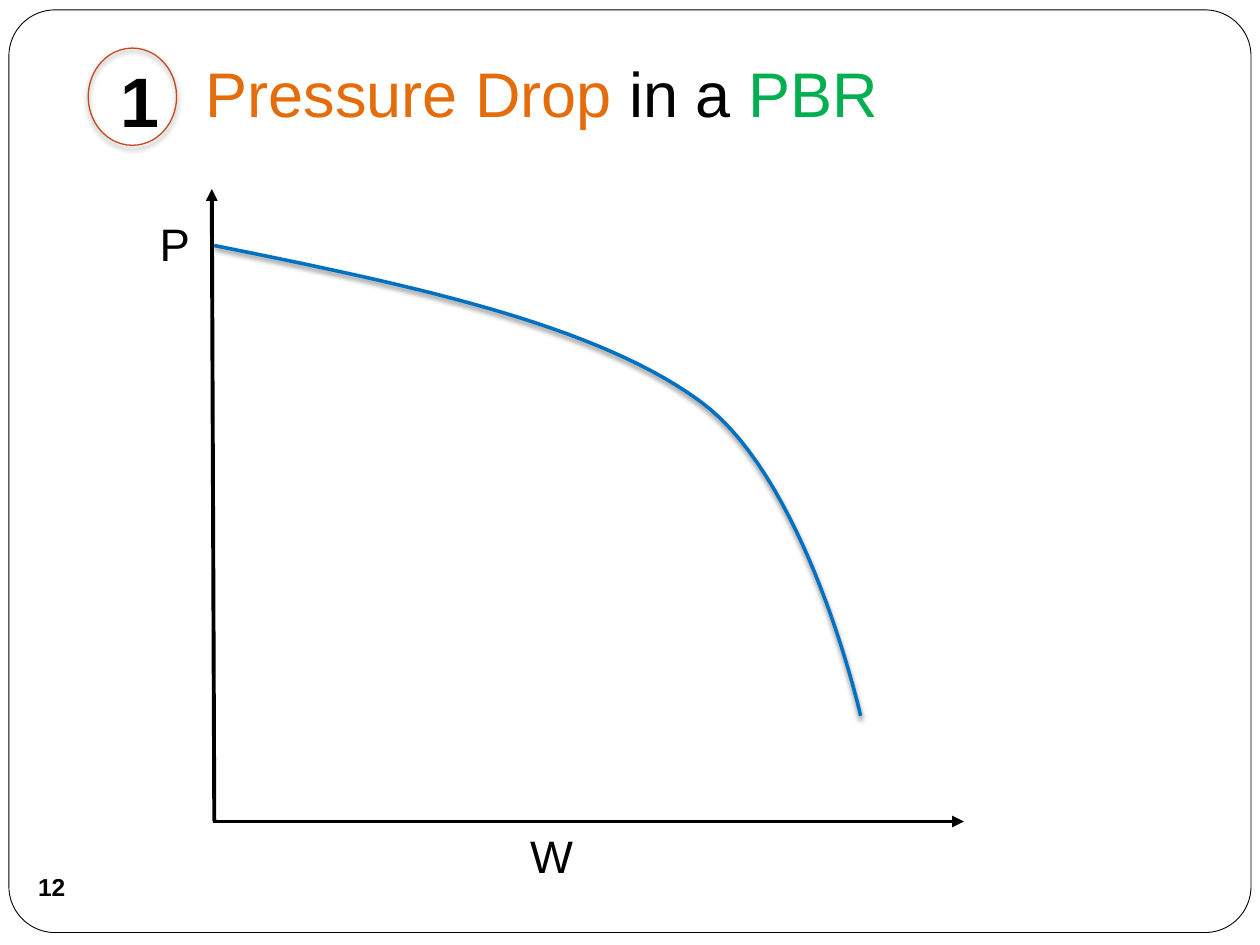
from lxml import etree
from pptx import Presentation
from pptx.dml.color import RGBColor
from pptx.enum.shapes import MSO_CONNECTOR, MSO_SHAPE
from pptx.enum.text import MSO_ANCHOR, MSO_AUTO_SIZE, PP_ALIGN
from pptx.oxml import parse_xml
from pptx.oxml.ns import nsdecls, qn
from pptx.util import Cm, Pt

ROUNDED, OVAL = MSO_SHAPE.ROUNDED_RECTANGLE, MSO_SHAPE.OVAL
STRAIGHT = MSO_CONNECTOR.STRAIGHT
TOP, MIDDLE = MSO_ANCHOR.TOP, MSO_ANCHOR.MIDDLE
LEFT, CENTER = PP_ALIGN.LEFT, PP_ALIGN.CENTER
NO_FIT = MSO_AUTO_SIZE.NONE
BLACK, WHITE = "000000", "FFFFFF"


def rgb(code):
    return RGBColor.from_string(code)


def write(shape, runs, size, bold=False, align=LEFT, **frame):
    tf = shape.text_frame
    for name, value in frame.items():
        setattr(tf, name, value)
    p = tf.paragraphs[0]
    p.alignment = align
    for text, color in runs:
        r = p.add_run()
        r.text = text
        for name, value in {"name": "Arial", "size": Pt(size), "bold": bold}.items():
            setattr(r.font, name, value)
        r.font.color.rgb = rgb(color)


prs = Presentation()
prs.slide_width, prs.slide_height = Cm(25.4), Cm(19.05)
s = prs.slides.add_slide(prs.slide_layouts[5])

frame = s.shapes.add_shape(ROUNDED, Cm(0.18), Cm(0.2), Cm(25.04), Cm(18.6))
frame.adjustments[0] = 0.05

bezier = [
    [(4.32, 4.95), (8.13, 5.72), (11.94, 6.5), (14.1, 8.08)],
    [(14.1, 8.08), (16.28, 9.65), (17.35, 14.43), (17.35, 14.43)],
]
steps = 30
points = []
for a, b, c, d in bezier:
    for i in range(steps + 1):
        t = i / steps
        u = 1 - t
        points.append([
            1000 * (u**3 * a[k] + 3 * u * u * t * b[k] + 3 * u * t * t * c[k] + t**3 * d[k])
            for k in (0, 1)
        ])
builder = s.shapes.build_freeform(*points[0], scale=Cm(1) / 1000)
builder.add_line_segments(points[1:], close=False)
curve = builder.convert_to_shape()

for text, x, y, w, h, size, bold in [
    ("W", 10.44, 16.56, 1.96, 1.4, 26, False),
    ("P", 2.97, 4.24, 1.3, 1.4, 26, False),
    ("1", 2.18, 1.04, 1.45, 1.96, 40, True),
]:
    label = s.shapes.add_textbox(Cm(x), Cm(y), Cm(w), Cm(h))
    write(label, [(text, BLACK)], size, bold, word_wrap=True)

ring = s.shapes.add_shape(OVAL, Cm(1.78), Cm(0.97), Cm(1.78), Cm(1.96))
number = s.shapes.add_shape(OVAL, Cm(0.41), Cm(17.25), Cm(1.27), Cm(1.27))
write(number, [("12", BLACK)], 14, True, CENTER, word_wrap=False, vertical_anchor=MIDDLE,
      margin_left=0, margin_right=0, margin_top=0, margin_bottom=0)

for shape, fill, line, width in [
    (frame, WHITE, BLACK, 0.5),
    (curve, None, "0070C0", 2),
    (ring, None, "C6491E", 0.75),
    (number, WHITE, None, 0),
]:
    shape.shadow.inherit = False
    if fill:
        shape.fill.solid()
        shape.fill.fore_color.rgb = rgb(fill)
    else:
        shape.fill.background()
    if line:
        shape.line.color.rgb = rgb(line)
        shape.line.width = Pt(width)
    else:
        shape.line.fill.background()

for shape in (curve, ring):
    shape._element.spPr.find(qn("a:effectLst")).append(parse_xml(
        f'<a:outerShdw {nsdecls("a")} blurRad="{Pt(3)}" dist="{Pt(2)}" dir="5400000" '
        'rotWithShape="0"><a:srgbClr val="000000"><a:alpha val="50000"/></a:srgbClr></a:outerShdw>'
    ))

title = s.shapes.title
title.left, title.top, title.width, title.height = Cm(3.89), Cm(0.97), Cm(14.2), Cm(1.8)
write(title, [("Pressure Drop ", "E46C0A"), ("in a ", BLACK), ("PBR", "00B050")], 36,
      word_wrap=False, auto_size=NO_FIT, vertical_anchor=TOP)
s.shapes._spTree.append(title._element)

for x1, y1, x2, y2 in [(4.32, 16.56, 4.27, 3.81), (4.29, 16.56, 19.43, 16.56)]:
    axis = s.shapes.add_connector(STRAIGHT, Cm(x1), Cm(y1), Cm(x2), Cm(y2))
    axis.line.color.rgb = rgb(BLACK)
    axis.line.width = Pt(2.25)
    etree.SubElement(axis.line._get_or_add_ln(), qn("a:tailEnd"), type="triangle")
    etree.SubElement(axis._element.spPr, qn("a:effectLst"))

prs.save("out.pptx")
